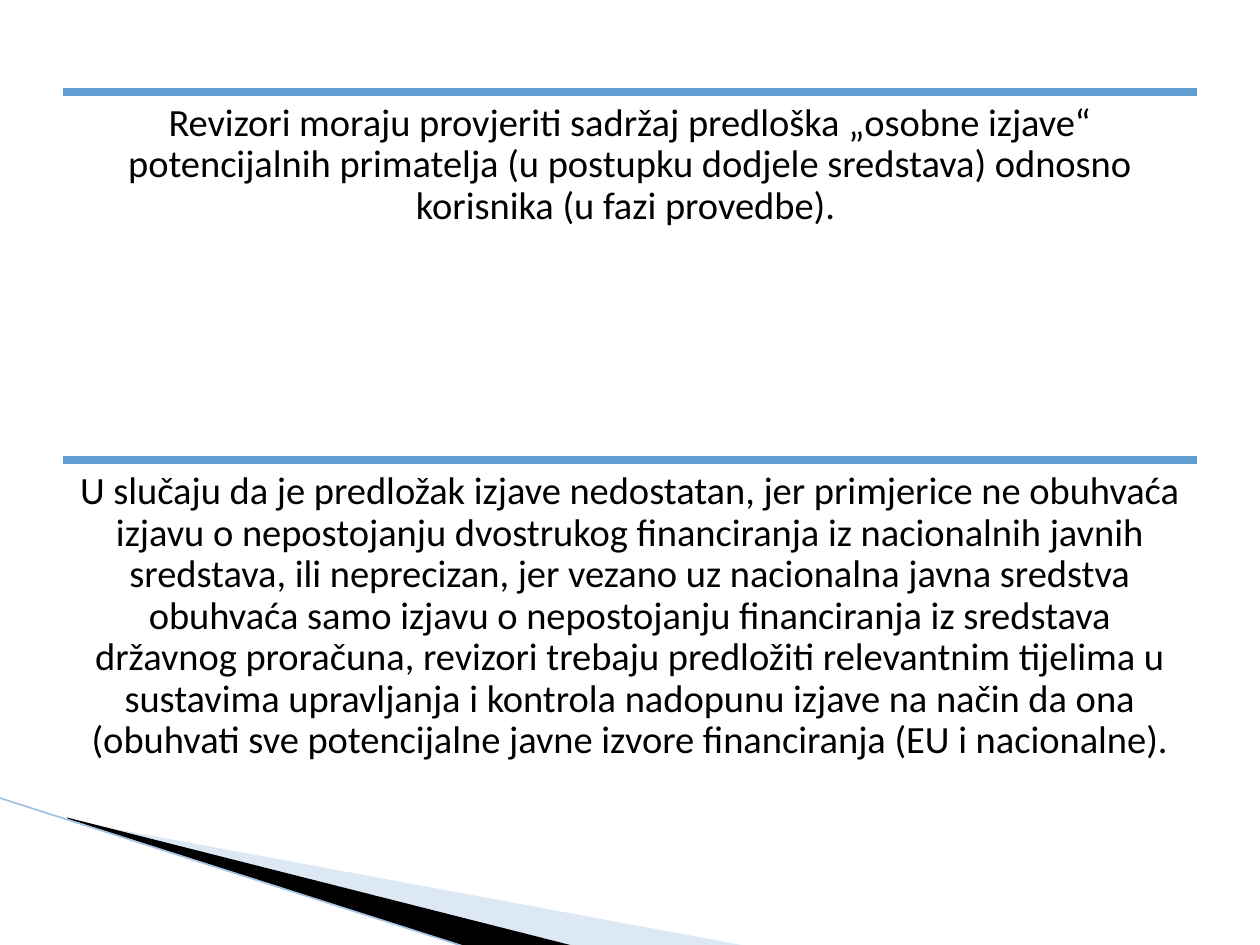
import dataclasses

import lxml.etree
import pptx
import pptx.dml.color
import pptx.enum.shapes
import pptx.enum.text
import pptx.oxml.ns
import pptx.util

Cm = pptx.util.Cm
Pt = pptx.util.Pt


@dataclasses.dataclass(frozen=True)
class Theme:
    font: str = "Calibri"
    body_size: float = 22
    ink: str = "000000"
    rule: str = "629DD1"
    rule_width: float = 4.33
    pale_wedge: str = "ABC6E6"
    pale_opacity: int = 40
    edge: str = "A4C1E3"
    edge_width: float = 0.95


class SlideBuilder:
    def __init__(self, slide, theme):
        self.slide = slide
        self.theme = theme

    def wedge(self, points, color, opacity=100):
        start, *rest = [(Cm(x), Cm(y)) for x, y in points]
        outline = self.slide.shapes.build_freeform(*start)
        outline.add_line_segments(rest, close=True)
        wedge = outline.convert_to_shape()
        wedge.shadow.inherit = False
        wedge.fill.solid()
        wedge.fill.fore_color.rgb = pptx.dml.color.RGBColor.from_string(color)
        wedge.line.fill.background()
        if opacity < 100:
            tint = wedge.fill._xPr.find(".//" + pptx.oxml.ns.qn("a:srgbClr"))
            alpha = lxml.etree.SubElement(tint, pptx.oxml.ns.qn("a:alpha"))
            alpha.set("val", str(opacity * 1000))

    def line(self, start, end, color, width):
        line = self.slide.shapes.add_connector(
            pptx.enum.shapes.MSO_CONNECTOR.STRAIGHT,
            *(Cm(length) for length in (*start, *end)))
        line.line.color.rgb = pptx.dml.color.RGBColor.from_string(color)
        line.line.width = Pt(width)
        lxml.etree.SubElement(line._element.spPr, pptx.oxml.ns.qn("a:effectLst"))

    def statement(self, left, top, width, height, wording):
        frame = self.slide.shapes.add_textbox(
            Cm(left), Cm(top), Cm(width), Cm(height)).text_frame
        frame.word_wrap = True
        frame.margin_left = frame.margin_right = Cm(0.23)
        frame.margin_top = frame.margin_bottom = Cm(0.23)
        paragraph = frame.paragraphs[0]
        paragraph.alignment = pptx.enum.text.PP_ALIGN.CENTER
        paragraph.line_spacing = 0.9
        run = paragraph.add_run()
        run.text = wording
        run.font.name = self.theme.font
        run.font.size = Pt(self.theme.body_size)
        run.font.color.rgb = pptx.dml.color.RGBColor.from_string(self.theme.ink)


STATEMENTS = [
    "Revizori moraju provjeriti sadržaj predloška „osobne izjave“ "
    "potencijalnih primatelja (u postupku dodjele sredstava) odnosno "
    "korisnika (u fazi provedbe). ",
    "U slučaju da je predložak izjave nedostatan, jer primjerice ne obuhvaća "
    "izjavu o nepostojanju dvostrukog financiranja iz nacionalnih javnih "
    "sredstava, ili neprecizan, jer vezano uz nacionalna javna sredstva "
    "obuhvaća samo izjavu o nepostojanju financiranja iz sredstava državnog "
    "proračuna, revizori trebaju predložiti relevantnim tijelima u sustavima "
    "upravljanja i kontrola nadopunu izjave na način da ona (obuhvati sve "
    "potencijalne javne izvore financiranja (EU i nacionalne).",
]


def main():
    presentation = pptx.Presentation()
    presentation.slide_width = Cm(25.4)
    presentation.slide_height = Cm(19.05)
    theme = Theme()
    builder = SlideBuilder(
        presentation.slides.add_slide(presentation.slide_layouts[6]), theme)

    builder.wedge([(1.4, 16.54), (15.11, 19.08), (11.58, 19.08), (1.4, 16.51)],
                  theme.pale_wedge, theme.pale_opacity)
    builder.wedge([(1.35, 16.48), (11.61, 19.08), (9.45, 19.1), (1.37, 16.51)],
                  theme.ink)
    builder.line((-0.03, 16.08), (9.42, 19.1), theme.edge, theme.edge_width)

    left, first_top, width, height = 1.27, 1.85, 22.86, 7.42
    for row, wording in enumerate(STATEMENTS):
        top = first_top + row * height
        builder.line((left, top), (left + width, top), theme.rule, theme.rule_width)
        builder.statement(left, top, width, height, wording)

    presentation.save("out.pptx")


if __name__ == "__main__":
    main()
